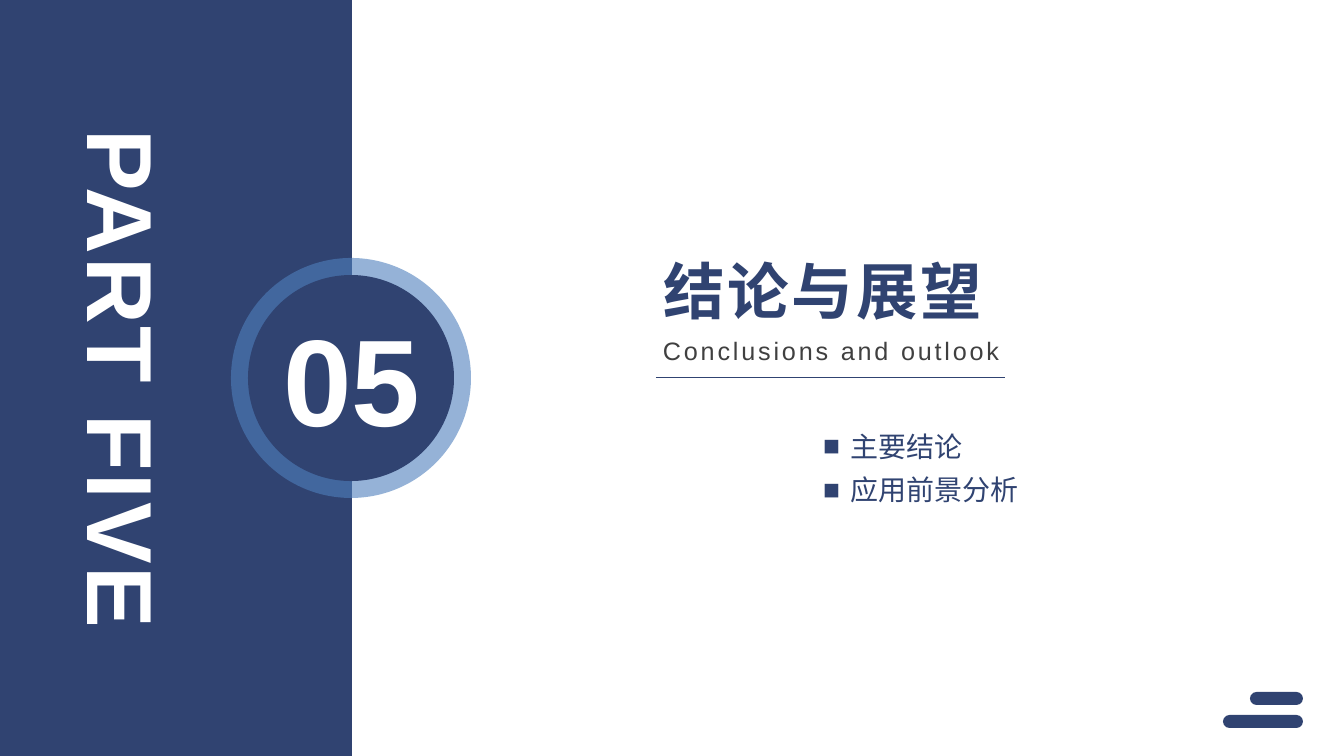
from dataclasses import dataclass

from lxml import etree
from pptx import Presentation
from pptx.dml.color import RGBColor
from pptx.enum.shapes import MSO_CONNECTOR, MSO_SHAPE
from pptx.enum.text import MSO_ANCHOR, MSO_AUTO_SIZE, PP_ALIGN
from pptx.oxml.ns import qn
from pptx.util import Emu, Pt

RECT, OVAL, PILL = MSO_SHAPE.RECTANGLE, MSO_SHAPE.OVAL, MSO_SHAPE.ROUNDED_RECTANGLE
STRAIGHT = MSO_CONNECTOR.STRAIGHT
TOP, MIDDLE = MSO_ANCHOR.TOP, MSO_ANCHOR.MIDDLE
LEFT, CENTER = PP_ALIGN.LEFT, PP_ALIGN.CENTER
NO_FIT = MSO_AUTO_SIZE.NONE

EMU_PER_PX = 914400 / 100.8
SLIDE_W, SLIDE_H = 1344, 756


@dataclass(frozen=True)
class Theme:
    font: str = "Arial"
    navy: str = "304371"
    ring: str = "4F80BD"
    white: str = "FFFFFF"
    grey: str = "404040"
    number_size: int = 88
    part_size: int = 66
    title_size: int = 44
    topic_size: int = 20
    subtitle_size: int = 18


THEME = Theme()


def px(length):
    return Emu(round(length * EMU_PER_PX))


def apply(target, values):
    for name, value in values.items():
        setattr(target, name, value)


def add_filled(shapes, kind, box, color, opacity=100):
    """Borderless preset shape; opacity is a percentage."""
    shape = shapes.add_shape(kind, *map(px, box))
    shape.shadow.inherit = False
    shape.line.fill.background()
    shape.fill.solid()
    shape.fill.fore_color.rgb = RGBColor.from_string(color)
    if opacity < 100:
        clr = shape.fill._xPr.find(qn("a:solidFill"))[0]
        etree.SubElement(clr, qn("a:alpha")).set("val", str(opacity * 1000))
    return shape


def add_disc(shapes, center, diameter, color, opacity=100):
    x, y = center
    box = (x - diameter // 2, y - diameter // 2, diameter, diameter)
    add_filled(shapes, OVAL, box, color, opacity)


def place(shape, box):
    apply(shape, dict(zip(("left", "top", "width", "height"), map(px, box))))


def write_line(shape, text, size, color, bold=False, spacing=0, align=LEFT, anchor=TOP):
    """One unwrapped line of text; spacing is in points."""
    frame = shape.text_frame
    apply(frame, {"word_wrap": False, "auto_size": NO_FIT, "vertical_anchor": anchor})
    paragraph = frame.paragraphs[0]
    paragraph.alignment = align
    run = paragraph.add_run()
    run.text = text
    apply(run.font, {"name": THEME.font, "size": Pt(size), "bold": bold})
    run.font.color.rgb = RGBColor.from_string(color)
    if spacing:
        run.font._element.set("spc", str(spacing * 100))


def add_label(shapes, box, *args, **formats):
    label = shapes.add_textbox(*map(px, box))
    write_line(label, *args, **formats)
    return label


def add_bullet(paragraph, indent):
    props = paragraph._p.get_or_add_pPr()
    props.set("marL", str(px(indent)))
    props.set("indent", str(-px(indent)))
    color = etree.SubElement(props, qn("a:buClr"))
    etree.SubElement(color, qn("a:srgbClr")).set("val", THEME.navy)
    etree.SubElement(props, qn("a:buFont")).set("typeface", THEME.font)
    etree.SubElement(props, qn("a:buChar")).set("char", "■")


def write_topics(body, topics):
    frame = body.text_frame
    apply(frame, {"word_wrap": True, "auto_size": NO_FIT, "vertical_anchor": TOP})
    for index, topic in enumerate(topics):
        paragraph = frame.add_paragraph() if index else frame.paragraphs[0]
        add_bullet(paragraph, indent=27)
        paragraph.text = topic
        apply(paragraph, {"line_spacing": 1.3, "space_before": Pt(0), "alignment": LEFT})
        apply(paragraph.font, {"name": THEME.font, "size": Pt(THEME.topic_size)})
        paragraph.font.color.rgb = RGBColor.from_string(THEME.navy)


def add_rule(shapes, left, right, y):
    rule = shapes.add_connector(STRAIGHT, px(left), px(y), px(right), px(y))
    rule.line.width = Pt(0.5)
    rule.line.color.rgb = RGBColor.from_string(THEME.navy)
    etree.SubElement(rule._element.spPr, qn("a:effectLst"))


def add_corner_bars(shapes, right, bars):
    """Right-aligned pills, each given as (top, width)."""
    group = shapes.add_group_shape()
    for top, width in bars:
        bar = add_filled(group.shapes, PILL, (right - width, top, width, 13), THEME.navy)
        bar.adjustments[0] = 0.5


def main():
    deck = Presentation()
    apply(deck, {"slide_width": px(SLIDE_W), "slide_height": px(SLIDE_H)})
    slide = deck.slides.add_slide(deck.slide_layouts[1])
    shapes = slide.shapes

    # Side panel with the section number
    add_filled(shapes, RECT, (0, 0, 352, SLIDE_H), THEME.navy)
    badge_center = (351, SLIDE_H // 2)
    add_disc(shapes, badge_center, 240, THEME.ring, opacity=60)
    add_disc(shapes, badge_center, 206, THEME.navy)
    add_label(shapes, (272, 298, 159, 159), "05", THEME.number_size, THEME.white,
              bold=True, align=CENTER)
    part = add_label(shapes, (53, 120, 132, 516), "PART FIVE", THEME.part_size,
                     THEME.white, bold=True, spacing=2, align=CENTER)
    part.text_frame._txBody.bodyPr.set("vert", "eaVert")

    # Section heading
    title = shapes.title
    place(title, (653, 247, 346, 85))
    write_line(title, "结论与展望", THEME.title_size, THEME.navy, bold=True,
               spacing=2, anchor=MIDDLE)
    add_label(shapes, (653, 330, 363, 40), "Conclusions and outlook",
              THEME.subtitle_size, THEME.grey, spacing=2)
    add_rule(shapes, 656, 1005, 377)

    # Topics of the section
    topics = slide.placeholders[1]
    place(topics, (813, 414, 219, 94))
    write_topics(topics, ["主要结论", "应用前景分析"])

    # Corner ornament
    add_corner_bars(shapes, 1303, [(715, 80), (692, 53)])

    deck.save("out.pptx")


if __name__ == "__main__":
    main()
